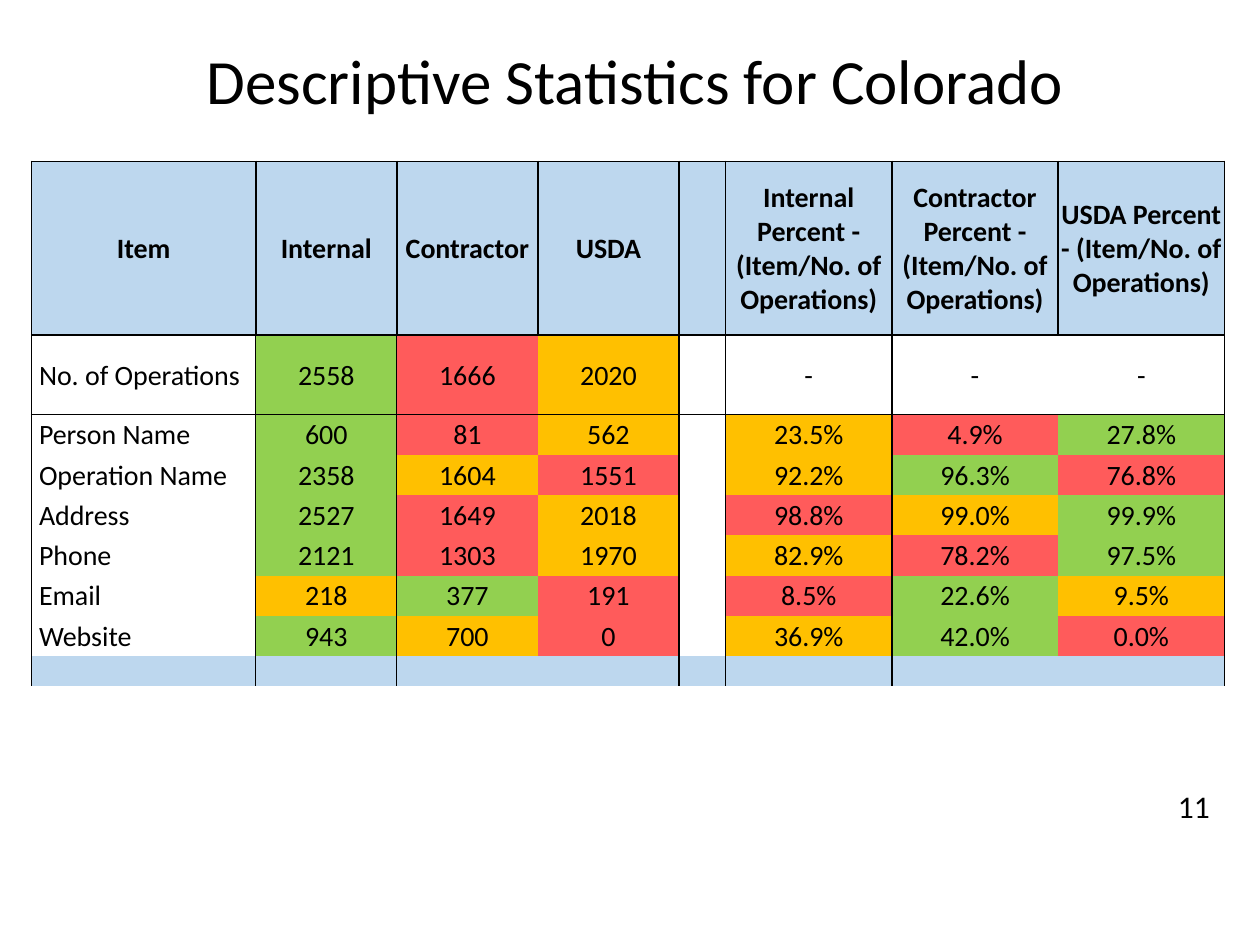
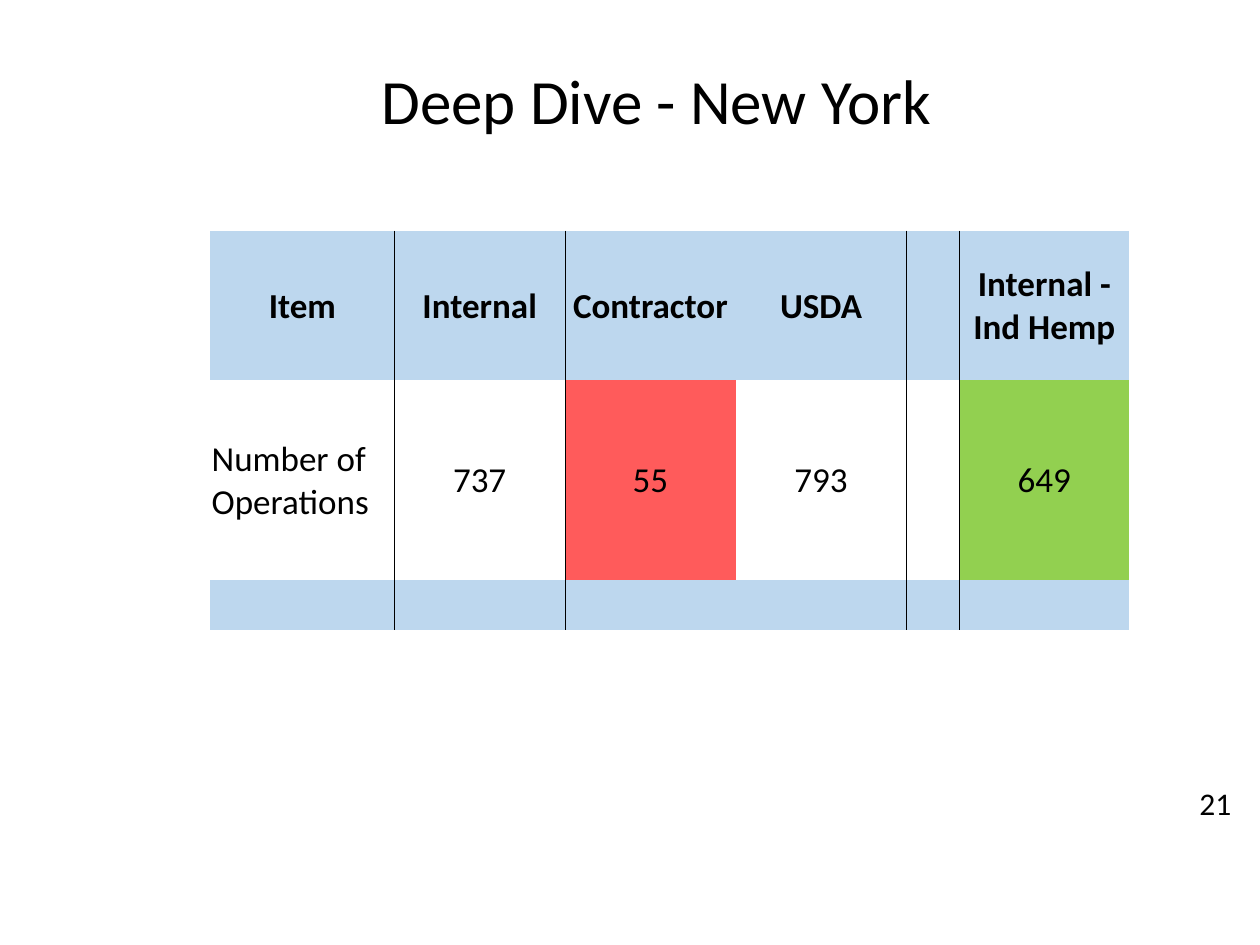
import pptx
import pptx.util
from lxml import etree
from pptx.dml.color import RGBColor
from pptx.enum.text import MSO_ANCHOR, MSO_AUTO_SIZE, PP_ALIGN
from pptx.oxml.ns import qn
from pptx.util import Inches

# Shared style
FONT = "Calibri"
BLACK = RGBColor(0x00, 0x00, 0x00)
BAND = RGBColor(0xBD, 0xD7, 0xEE)
HIGH = RGBColor(0x92, 0xD0, 0x50)
MIDDLE = RGBColor(0xFF, 0xC0, 0x00)
LOW = RGBColor(0xFF, 0x5B, 0x5B)
NO_GRID_STYLE = "{2D5ABB26-0587-4C30-8999-92F81FD0307C}"
THIN, THICK = 0.5, 1

# Colorado figures: item, counts by source, percents by source
SOURCES = ["Internal", "Contractor", "USDA"]
COLORADO = [
    ("No. of Operations", [2558, 1666, 2020], None),
    ("Person Name", [600, 81, 562], [23.5, 4.9, 27.8]),
    ("Operation Name", [2358, 1604, 1551], [92.2, 96.3, 76.8]),
    ("Address", [2527, 1649, 2018], [98.8, 99.0, 99.9]),
    ("Phone", [2121, 1303, 1970], [82.9, 78.2, 97.5]),
    ("Email", [218, 377, 191], [8.5, 22.6, 9.5]),
    ("Website", [943, 700, 0], [36.9, 42.0, 0.0]),
]


def add_run(paragraph, text, size, bold=False):
    run = paragraph.add_run()
    run.text = text
    run.font.name = FONT
    run.font.size = pptx.util.Pt(size)
    run.font.bold = bold
    run.font.color.rgb = BLACK


def add_title(slide, text, left, top):
    title = slide.shapes.add_textbox(Inches(left), Inches(top), Inches(8.42), Inches(0.92))
    frame = title.text_frame
    frame.word_wrap = True
    frame.vertical_anchor = MSO_ANCHOR.MIDDLE
    frame.paragraphs[0].alignment = PP_ALIGN.CENTER
    add_run(frame.paragraphs[0], text, 36)


def add_page_number(slide, number, left, top, width):
    page = slide.shapes.add_textbox(Inches(left), Inches(top), Inches(width), Inches(0.4))
    page.text_frame.word_wrap = True
    page.text_frame.auto_size = MSO_AUTO_SIZE.SHAPE_TO_FIT_TEXT
    add_run(page.text_frame.paragraphs[0], str(number), 18)


def draw_borders(cell, left=0, right=0, top=0, bottom=0):
    """Widths are in points; zero leaves the side open."""
    properties = cell._tc.get_or_add_tcPr()
    for side, width in (("L", left), ("R", right), ("T", top), ("B", bottom)):
        if width:
            line = etree.SubElement(properties, qn(f"a:ln{side}"),
                                    w=str(pptx.util.Pt(width)))
            fill = etree.SubElement(line, qn("a:solidFill"))
            etree.SubElement(fill, qn("a:srgbClr"), val=str(BLACK))


def write_cell(cell, text, size, fill=None, bold=False, centred=True, indent=0.01):
    cell.vertical_anchor = MSO_ANCHOR.MIDDLE
    cell.margin_left = Inches(indent)
    cell.margin_right = cell.margin_top = Inches(0.01)
    cell.margin_bottom = 0
    if fill is None:
        cell.fill.background()
    else:
        cell.fill.solid()
        cell.fill.fore_color.rgb = fill
    paragraph = cell.text_frame.paragraphs[0]
    paragraph.alignment = PP_ALIGN.CENTER if centred else PP_ALIGN.LEFT
    if text:
        add_run(paragraph, text, size, bold)
    else:  # keeps empty cells from stretching their row
        etree.SubElement(paragraph._p, qn("a:endParaRPr"), sz="1000")


def add_statistics_table(slide, left, top, widths, heights, header, body, edges,
                         size, label_indent=0.01, boxed_header=False):
    """Banded header and closing row; body rows hold (text, fill) pairs."""
    closing = [("", BAND)] * len(widths)
    rows = [[(text, BAND) for text in header]] + body + [closing]
    frame = slide.shapes.add_table(len(rows), len(widths), Inches(left), Inches(top),
                                   Inches(sum(widths)), Inches(sum(heights)))
    table = frame.table
    table.first_row = table.horz_banding = False
    table._tbl.tblPr.find(qn("a:tableStyleId")).text = NO_GRID_STYLE
    for column, width in zip(table.columns, widths):
        column.width = Inches(width)
    for row, height in zip(table.rows, heights):
        row.height = Inches(height)

    for r, values in enumerate(rows):
        in_header = r == 0
        boxed = boxed_header and in_header
        row_edges = [THICK] * len(edges) if boxed else edges
        for c, (text, fill) in enumerate(values):
            cell = table.cell(r, c)
            draw_borders(cell, row_edges[c], row_edges[c + 1],
                         top=THICK if boxed or (boxed_header and r == 1) else 0,
                         bottom=THICK if boxed else 0)
            is_label = c == 0 and not in_header
            write_cell(cell, text, size, fill, bold=in_header, centred=not is_label,
                       indent=label_indent if is_label else 0.01)


def ranked(values, pattern):
    """Colour the three sources from lowest to highest."""
    order = sorted(values)
    return [(pattern.format(v), (LOW, MIDDLE, HIGH)[order.index(v)]) for v in values]


def build_colorado(slide):
    add_title(slide, "Descriptive Statistics for Colorado", 0.83, 0.17)
    add_page_number(slide, 11, 9.25, 6.2, 0.5)
    percent_heads = [f"{s} Percent - (Item/No. of Operations)" for s in SOURCES]
    body = []
    for item, counts, percents in COLORADO:
        shares = ranked(percents, "{:.1f}%") if percents else [("-", None)] * 3
        body.append([(item, None)] + ranked(counts, "{}") + [("", None)] + shares)
    add_statistics_table(
        slide, 0.25, 1.28,
        widths=[1.78] + [1.12] * 3 + [0.37] + [1.32] * 3,
        heights=[1.38, 0.63] + [0.32] * 6 + [0.24],
        header=["Item"] + SOURCES + [""] + percent_heads, body=body,
        edges=[THICK, THIN, 0, 0, THICK, THICK, 0, 0, THICK],
        size=16, label_indent=0.06, boxed_header=True)


def build_new_york(slide):
    add_title(slide, "Deep Dive - New York", 1, 0.33)
    operations = [("Number of Operations", None), ("737", None), ("55", LOW),
                  ("793", None), ("", None), ("649", HIGH)]
    add_statistics_table(
        slide, 1.67, 1.83,
        widths=[1.46] + [1.355] * 3 + [0.42, 1.35],
        heights=[1.19, 1.58, 0.4],
        header=["Item"] + SOURCES + ["", "Internal - Ind Hemp"], body=[operations],
        edges=[0, THIN, 0, 0, THICK, THICK, 0], size=20)
    add_page_number(slide, 21, 9.42, 6.17, 0.58)


def main():
    deck = pptx.Presentation()
    deck.slide_width, deck.slide_height = Inches(10), Inches(7.5)
    for build in (build_colorado, build_new_york):
        build(deck.slides.add_slide(deck.slide_layouts[6]))
    deck.save("out.pptx")


if __name__ == "__main__":
    main()
